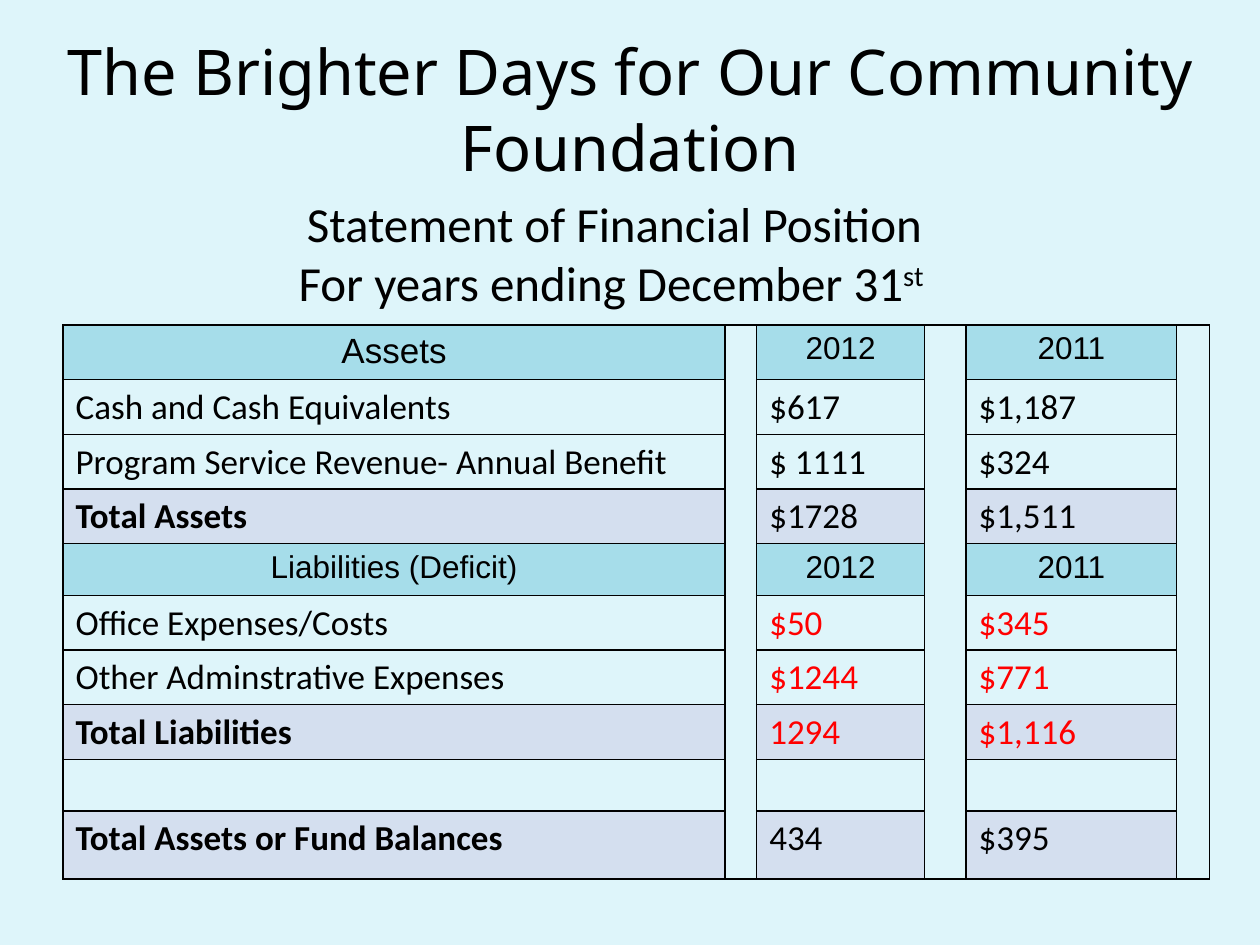
from lxml import etree
from pptx import Presentation
from pptx import util as u
from pptx.dml.color import RGBColor
from pptx.enum import text
from pptx.oxml import ns

PALE = RGBColor(0xDE, 0xF5, 0xFA)
AQUA = RGBColor(0xA6, 0xDD, 0xEA)
LAVENDER = RGBColor(0xD4, 0xDF, 0xEF)
BLACK = RGBColor(0, 0, 0)
RED = RGBColor(0xFF, 0, 0)

WIDTH, HEIGHT = u.Inches(10), u.Inches(7.5)
COLUMNS = [5.25, 0.25, 1.33, 0.33, 1.67, 0.26]
ROWS = [0.41] * 9 + [0.54]
VALUE_COLUMNS = (0, 2, 4)
SPACER_COLUMNS = (1, 3, 5)

HEAD = dict(size=u.Pt(18), name="Arial", bold=False)
BODY = dict(size=u.Pt(20), name="Calibri", bold=False)
TOTAL = BODY | dict(bold=True)
TITLE = dict(size=u.Pt(36), name="Noto Sans")
SUBTITLE = dict(size=u.Pt(28), name="Calibri")

STATEMENT = [
    ("head", BLACK, "Assets", "2012", "2011"),
    ("item", BLACK, "Cash and Cash Equivalents", "$617", "$1,187"),
    ("item", BLACK, "Program Service Revenue- Annual Benefit", "$ 1111", "$324"),
    ("total", BLACK, "Total Assets", "$1728", "$1,511"),
    ("head", BLACK, "Liabilities (Deficit)", "2012", "2011"),
    ("item", RED, "Office Expenses/Costs", "$50", "$345"),
    ("item", RED, "Other Adminstrative Expenses", "$1244", "$771"),
    ("total", RED, "Total Liabilities", "1294", "$1,116"),
    ("item", BLACK, "", "", ""),
    ("total", BLACK, "Total Assets or Fund Balances", "434", "$395"),
]
FILLS = {"head": AQUA, "item": None, "total": LAVENDER}


def place(box):
    return [int(percent * full / 100)
            for percent, full in zip(box, (WIDTH, HEIGHT, WIDTH, HEIGHT))]


def add_run(p, words, formats, colour=BLACK):
    r = p.add_run()
    r.text = words
    for key, value in formats.items():
        setattr(r.font, key, value)
    r.font.color.rgb = colour
    return r


def add_centred_box(s, box, anchor):
    tf = s.shapes.add_textbox(*place(box)).text_frame
    tf.word_wrap = True
    tf.vertical_anchor = anchor
    p = tf.paragraphs[0]
    p.alignment = text.PP_ALIGN.CENTER
    return p


def add_title(s, box):
    p = add_centred_box(s, box, text.MSO_ANCHOR.MIDDLE)
    add_run(p, "The Brighter Days for Our Community Foundation", TITLE)


def add_subtitle(s, box):
    p = add_centred_box(s, box, text.MSO_ANCHOR.TOP)
    add_run(p, "Statement of Financial Position", SUBTITLE)
    p.add_line_break()
    add_run(p, "For years ending December 31", SUBTITLE)
    r = add_run(p, "st ", SUBTITLE)
    r.font._element.set("baseline", "30000")


def style_cell(cell, fill=None):
    tcPr = cell._tc.get_or_add_tcPr()
    for side in "LRTB":
        line = etree.SubElement(tcPr, ns.qn(f"a:ln{side}"), w=str(u.Pt(1)))
        solid = etree.SubElement(line, ns.qn("a:solidFill"))
        etree.SubElement(solid, ns.qn("a:srgbClr"), val=str(BLACK))
    if fill is None:
        cell.fill.background()
    else:
        cell.fill.solid()
        cell.fill.fore_color.rgb = fill


def add_statement(s, box):
    x, y, w, h = place(box)
    table = s.shapes.add_table(len(ROWS), len(COLUMNS), x, y, w, h).table
    table.first_row = table.horz_banding = False
    for column, share in zip(table.columns, COLUMNS):
        column.width = int(w * share / sum(COLUMNS))
    for row, share in zip(table.rows, ROWS):
        row.height = int(h * share / sum(ROWS))

    for i, (kind, value_colour, *words) in enumerate(STATEMENT):
        for j, word in zip(VALUE_COLUMNS, words):
            cell = table.cell(i, j)
            style_cell(cell, FILLS[kind])
            p = cell.text_frame.paragraphs[0]
            formats = BODY
            if kind == "head":
                p.alignment = text.PP_ALIGN.CENTER
                formats = HEAD | dict(size=u.Pt(20)) if i == j == 0 else HEAD
            elif kind == "total" and j == 0:
                formats = TOTAL
            add_run(p, word, formats, value_colour if j else BLACK)

    for j in SPACER_COLUMNS:
        for i in range(len(ROWS)):
            style_cell(table.cell(i, j))
        table.cell(0, j).merge(table.cell(len(ROWS) - 1, j))


def main():
    prs = Presentation()
    prs.slide_width, prs.slide_height = WIDTH, HEIGHT
    s = prs.slides.add_slide(prs.slide_layouts[6])
    s.background.fill.solid()
    s.background.fill.fore_color.rgb = PALE
    add_title(s, (0, 5.1, 100, 12.7))
    add_statement(s, (5, 34.4, 91, 56.4))
    add_subtitle(s, (-2.5, 19.8, 102.5, 18))
    prs.save("out.pptx")


if __name__ == "__main__":
    main()
